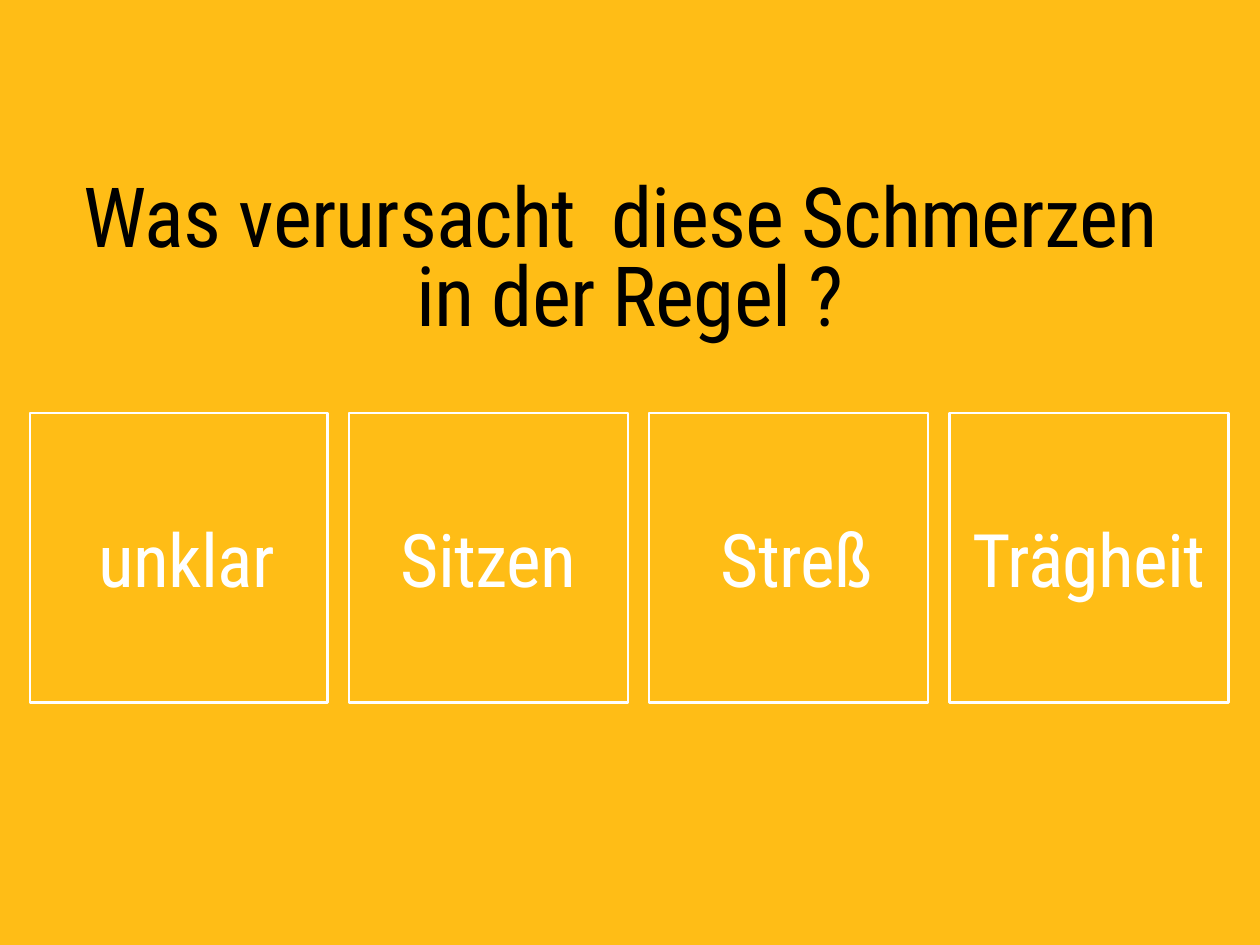
from pptx import Presentation
from pptx.dml.color import RGBColor
from pptx.enum.shapes import MSO_SHAPE as Form
from pptx.enum.text import MSO_ANCHOR as Anchor, PP_ALIGN as Align
from pptx.util import Cm, Pt

AMBER = RGBColor(0xFF, 0xBD, 0x16)
BLACK = RGBColor(0, 0, 0)
WHITE = RGBColor(0xFF, 0xFF, 0xFF)
FONT = "Roboto Condensed"
LEFT, GAP = 0.86, 0.61
ANSWERS = [(" unklar", 8.53), ("Sitzen", 8), (" Streß", 8), ("Trägheit", 8)]


def write(shape, *lines, size, color, track, space=1.0):
    frame = shape.text_frame
    frame.word_wrap = True
    frame.vertical_anchor = Anchor.MIDDLE
    frame.margin_left = frame.margin_right = Cm(0.08)
    frame.margin_top = frame.margin_bottom = Cm(0.08)
    for i, line in enumerate(lines):
        para = frame.add_paragraph() if i else frame.paragraphs[0]
        para.alignment = Align.CENTER
        para.line_spacing = space
        run = para.add_run()
        run.text = line
        run.font.name = FONT
        run.font.size = Pt(size)
        run.font.color.rgb = color
        run._r.get_or_add_rPr().set("spc", str(track))


def add_title(slide):
    title = slide.shapes.add_textbox(Cm(1.8), Cm(4.39), Cm(32.51), Cm(6.32))
    write(title, "Was verursacht  diese Schmerzen ", "in der Regel ?",
          size=67.5, color=BLACK, track=-70, space=0.8)


def add_answer(slide, text, left, width):
    box = slide.shapes.add_shape(
        Form.RECTANGLE, Cm(left), Cm(11.84), Cm(width), Cm(8.31))
    box.shadow.inherit = False
    box.fill.background()
    box.line.color.rgb = WHITE
    box.line.width = Pt(2)
    write(box, text, size=60, color=WHITE, track=-60)


def main():
    deck = Presentation()
    deck.slide_width, deck.slide_height = Cm(36.12), Cm(27.1)
    slide = deck.slides.add_slide(deck.slide_layouts[6])
    slide.background.fill.solid()
    slide.background.fill.fore_color.rgb = AMBER
    add_title(slide)
    left = LEFT
    for text, width in ANSWERS:
        add_answer(slide, text, left, width)
        left += width + GAP
    deck.save("out.pptx")


if __name__ == "__main__":
    main()
